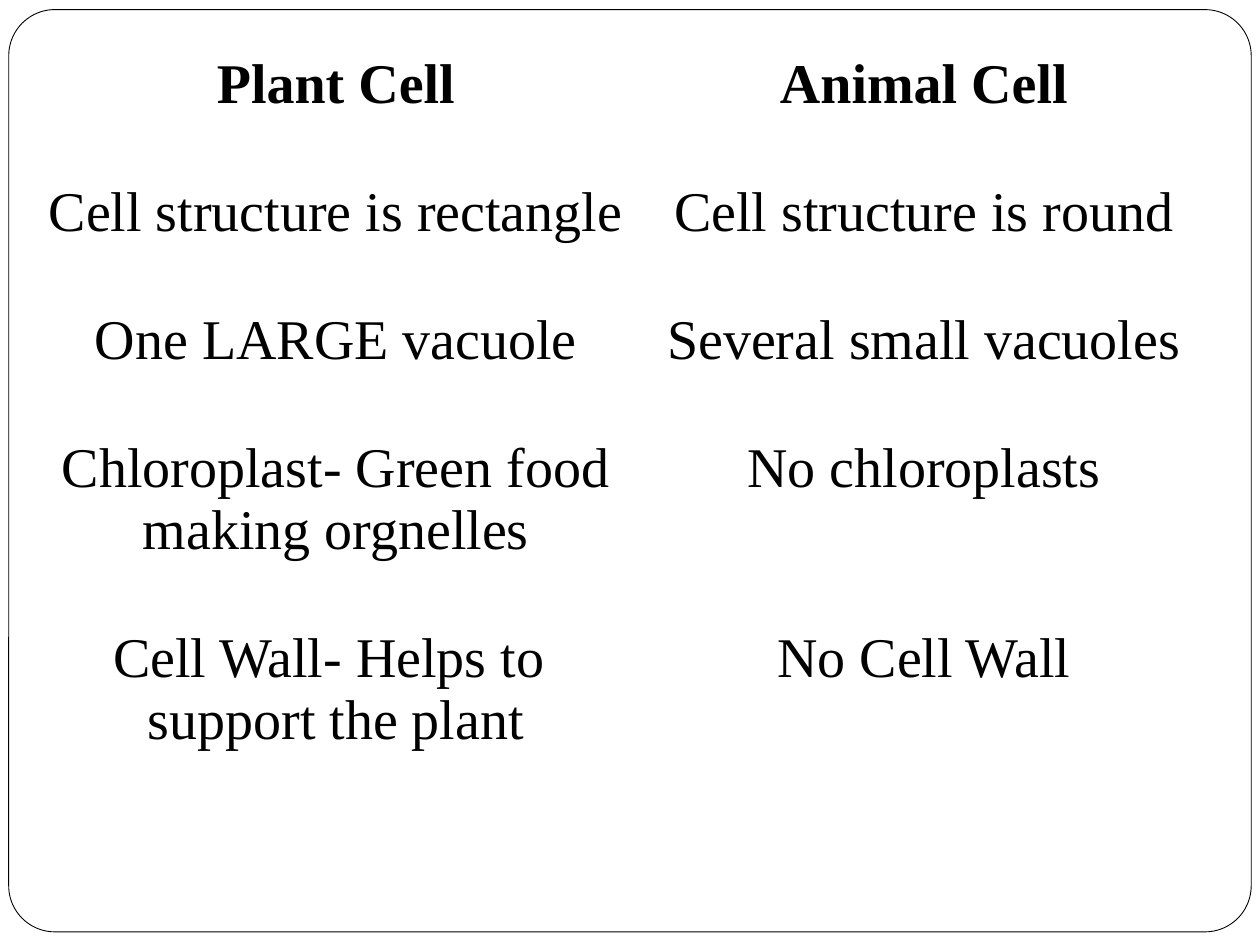
from pptx import Presentation
from pptx.dml.color import RGBColor
from pptx.enum import shapes, text
from pptx.util import Pt

COMPARISON = [
    ("Plant Cell", "Animal Cell"),
    ("Cell structure is rectangle", "Cell structure is round"),
    ("One LARGE vacuole", "Several small vacuoles"),
    ("Chloroplast- Green food\nmaking orgnelles", "No chloroplasts"),
    ("Cell Wall- Helps to \nsupport the plant", "No Cell Wall"),
]
ROW_HEIGHTS = [73.15, 73.15, 73.15, 108.6, 143]
COLUMN_WIDTH = 336
CELL_MARGIN = 0.75


def color(hex_value):
    return RGBColor.from_string(hex_value)


def write(frame, words, size=32, bold=False, font="Times New Roman", ink="000000"):
    paragraph = frame.paragraphs[0]
    paragraph.text = words  # newlines become line breaks
    paragraph.alignment = text.PP_ALIGN.CENTER
    for run in paragraph.runs:
        run.font.name = font
        run.font.size = Pt(size)
        run.font.bold = bold
        run.font.color.rgb = color(ink)


deck = Presentation()
deck.slide_width, deck.slide_height = Pt(720), Pt(540)
slide = deck.slides.add_slide(deck.slide_layouts[6])

# Rounded border
border = slide.shapes.add_shape(shapes.MSO_SHAPE.ROUNDED_RECTANGLE,
                                Pt(5), Pt(5.5), Pt(710), Pt(527))
border.adjustments[0] = 0.05
border.shadow.inherit = False
border.fill.solid()
border.fill.fore_color.rgb = color("FFFFFF")
border.line.color.rgb = color("000000")
border.line.width = Pt(0.5)

# Comparison table
columns = len(COMPARISON[0])
table = slide.shapes.add_table(len(COMPARISON), columns, Pt(24), Pt(30),
                               Pt(COLUMN_WIDTH * columns), Pt(sum(ROW_HEIGHTS))).table
table.first_row = table.horz_banding = False
for column in table.columns:
    column.width = Pt(COLUMN_WIDTH)

for r, (height, traits) in enumerate(zip(ROW_HEIGHTS, COMPARISON)):
    table.rows[r].height = Pt(height)
    for c, trait in enumerate(traits):
        cell = table.cell(r, c)
        cell.fill.background()
        cell.margin_left = cell.margin_right = Pt(CELL_MARGIN)
        cell.margin_top = cell.margin_bottom = Pt(CELL_MARGIN)
        write(cell.text_frame, trait, bold=r == 0)

deck.save("out.pptx")
